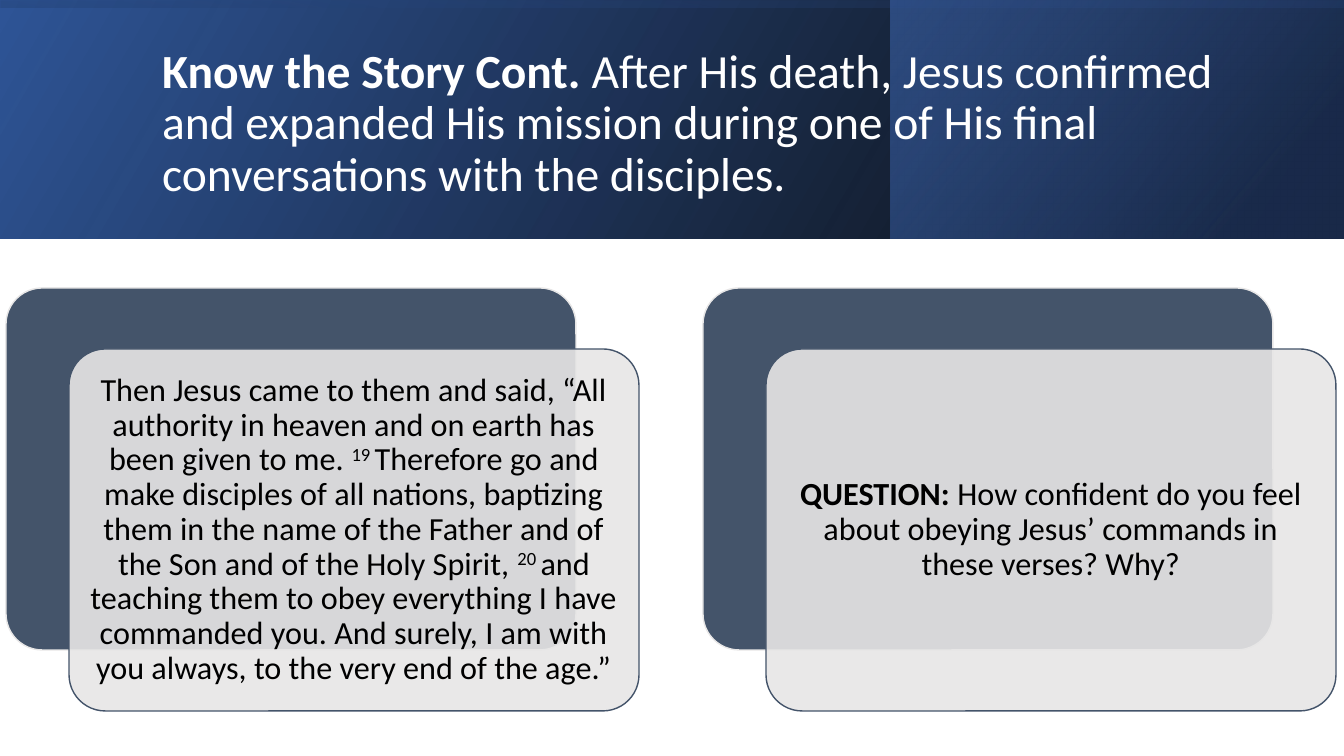
import pptx
import pptx.util
import pptx.dml.color
import pptx.enum.shapes
import pptx.enum.text
import pptx.oxml
import pptx.oxml.ns

PX = 914400 / 100.8
SLIDE_SIZE = (1344, 756)
FONT = "Calibri"
SLATE, PALE, WHITE, BLACK = "44546A", "E7E6E6", "FFFFFF", "000000"

BANDS = [
    {"box": (0, 0, 1344, 239), "turn": 0, "angle": 330,
     "stops": [(0, BLACK, 96), (100, "2F5597", 100)]},
    {"box": (891, 0, 452, 239), "turn": 0, "angle": 320,
     "stops": [(19, "203864", 68), (100, "4472C4", 48)]},
    {"box": (553, -552, 239, 1344), "turn": 270, "angle": 350,
     "stops": [(23, "2F5597", 16), (99, BLACK, 45)]},
]
HEADING_BOX = (152, 38, 1072, 173)
HEADING = [
    ("Know the Story Cont. ", "bold"),
    ("After His death, Jesus confirmed and expanded His mission during one of "
     "His final conversations with the disciples.", ""),
]
CARDS = [
    [
        ("Then Jesus came to them and said, “All authority in heaven and on "
         "earth has been given to me. ", ""),
        ("19 ", "super"),
        ("Therefore go and make disciples of all nations, baptizing them in the "
         "name of the Father and of the Son and of the Holy Spirit, ", ""),
        ("20 ", "super"),
        ("and teaching them to obey everything I have commanded you. And surely, "
         "I am with you always, to the very end of the age.”", ""),
    ],
    [
        ("QUESTION: ", "bold"),
        ("How confident do you feel about obeying Jesus’ commands in these "
         "verses? Why?", ""),
    ],
]
CARD_LEFT, CARD_TOP, CARD_WIDTH, CARD_HEIGHT = 6, 288, 570, 362
CARD_PITCH = 697
FRONT_SHIFT = (63, 61)
CARD_INSET = 10


def px(length):
    return pptx.util.Emu(round(length * PX))


def color(code):
    return pptx.dml.color.RGBColor.from_string(code)


def write(frame, pieces, size, ink, align, inset=None):
    frame.word_wrap = True
    frame.auto_size = pptx.enum.text.MSO_AUTO_SIZE.NONE
    frame.vertical_anchor = pptx.enum.text.MSO_ANCHOR.MIDDLE
    if inset is not None:
        frame.margin_left = frame.margin_right = px(inset)
        frame.margin_top = frame.margin_bottom = px(inset)
    paragraph = frame.paragraphs[0]
    paragraph.alignment = align
    paragraph.line_spacing = 0.9
    for words, style in pieces:
        run = paragraph.add_run()
        run.text = words
        run.font.name = FONT
        run.font.size = pptx.util.Pt(size)
        run.font.bold = style == "bold"
        run.font.color.rgb = color(ink)
        if style == "super":
            run.font._element.set("baseline", "30000")


def add_band(shapes, box, turn, angle, stops):
    band = shapes.add_shape(pptx.enum.shapes.MSO_SHAPE.RECTANGLE, *map(px, box))
    band.shadow.inherit = False
    band.rotation = turn
    band.line.fill.background()
    band.fill.background()
    properties = band.element.spPr
    properties.find(pptx.oxml.ns.qn("a:xfrm")).set("flipH", "1")
    stop_xml = "".join(
        f'<a:gs pos="{place * 1000}"><a:srgbClr val="{code}">'
        f'<a:alpha val="{opacity * 1000}"/></a:srgbClr></a:gs>'
        for place, code, opacity in stops)
    gradient = pptx.oxml.parse_xml(
        f'<a:gradFill {pptx.oxml.ns.nsdecls("a")} rotWithShape="1">'
        f'<a:gsLst>{stop_xml}</a:gsLst>'
        f'<a:lin ang="{angle * 60000}" scaled="0"/></a:gradFill>')
    properties.replace(properties.find(pptx.oxml.ns.qn("a:noFill")), gradient)


def add_panel(shapes, left, top, fill, edge, opacity=100):
    panel = shapes.add_shape(
        pptx.enum.shapes.MSO_SHAPE.ROUNDED_RECTANGLE,
        *map(px, (left, top, CARD_WIDTH, CARD_HEIGHT)))
    panel.adjustments[0] = 0.1
    panel.shadow.inherit = False
    panel.fill.solid()
    panel.fill.fore_color.rgb = color(fill)
    panel.line.color.rgb = color(edge)
    panel.line.width = pptx.util.Pt(1)
    if opacity < 100:
        tint = panel.element.spPr.find(pptx.oxml.ns.qn("a:solidFill"))[0]
        tint.append(pptx.oxml.parse_xml(
            f'<a:alpha {pptx.oxml.ns.nsdecls("a")} val="{opacity * 1000}"/>'))
    return panel


def main():
    deck = pptx.Presentation()
    deck.slide_width, deck.slide_height = map(px, SLIDE_SIZE)
    slide = deck.slides.add_slide(deck.slide_layouts[5])
    shapes = slide.shapes

    for band in BANDS:
        add_band(shapes, **band)

    heading = shapes.title
    heading.left, heading.top, heading.width, heading.height = map(px, HEADING_BOX)
    write(heading.text_frame, HEADING, size=34, ink=WHITE,
          align=pptx.enum.text.PP_ALIGN.LEFT)
    heading.element.getparent().append(heading.element)

    for column, passage in enumerate(CARDS):
        left = CARD_LEFT + column * CARD_PITCH
        add_panel(shapes, left, CARD_TOP, SLATE, PALE)
        front = add_panel(shapes, left + FRONT_SHIFT[0], CARD_TOP + FRONT_SHIFT[1],
                          PALE, SLATE, opacity=90)
        write(front.text_frame, passage, size=23, ink=BLACK,
              align=pptx.enum.text.PP_ALIGN.CENTER, inset=CARD_INSET)

    deck.save("out.pptx")


if __name__ == "__main__":
    main()
